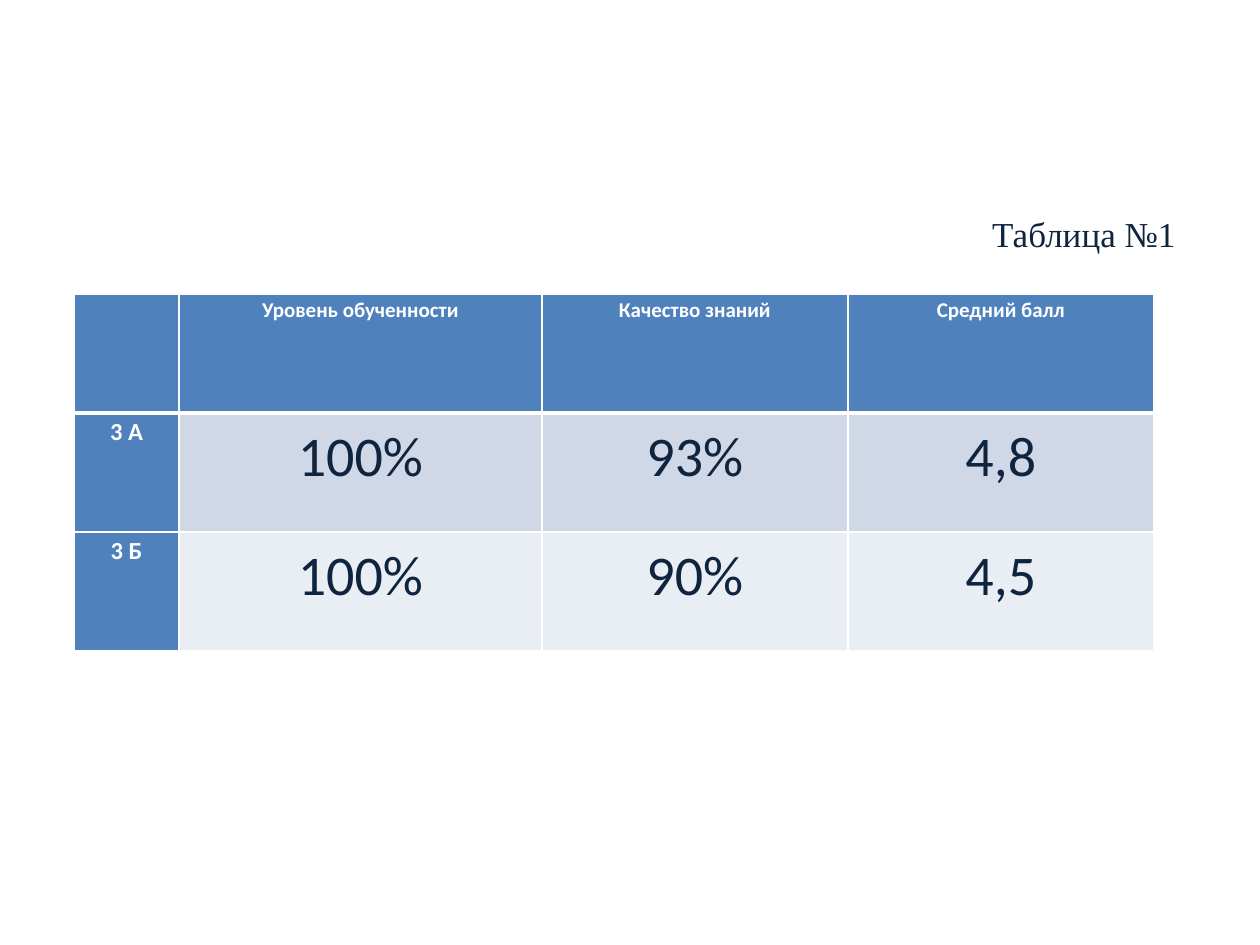
import dataclasses

import lxml.etree
import pptx
import pptx.dml.color
import pptx.enum.text
import pptx.oxml.ns
import pptx.util

ALIGN = pptx.enum.text.PP_ALIGN
ANCHOR = pptx.enum.text.MSO_ANCHOR


@dataclasses.dataclass(frozen=True)
class Theme:
    navy: str = "0F243E"
    blue: str = "4F81BD"
    white: str = "FFFFFF"
    bands: tuple = ("D0D8E8", "E9EDF4")
    title_font: str = "Times New Roman"
    table_font: str = "Calibri"
    title_size: int = 20
    header_size: int = 12
    label_size: int = 14
    value_size: int = 32
    line_spacing: float = 1.15
    thin: int = 1
    thick: int = 3


def px(n):
    return pptx.util.Emu(round(n * 914400 / 126))


def rgb(color):
    return pptx.dml.color.RGBColor.from_string(color)


class Deck:
    def __init__(self, theme):
        self.theme = theme
        self.prs = pptx.Presentation()
        self.prs.slide_width, self.prs.slide_height = px(1260), px(945)
        self.s = self.prs.slides.add_slide(self.prs.slide_layouts[6])

    def text(self, tf, text, font, size, color, align, bold=False):
        p = tf.paragraphs[0]
        p.text = text
        p.alignment = align
        p.line_spacing = self.theme.line_spacing
        for r in p.runs:
            r.font.name = font
            r.font.size = pptx.util.Pt(size)
            r.font.bold = bold
            r.font.color.rgb = rgb(color)
        return p

    def title(self, text, x, y, w, h):
        t = self.theme
        tf = self.s.shapes.add_textbox(px(x), px(y), px(w), px(h)).text_frame
        tf.word_wrap = True
        tf.vertical_anchor = ANCHOR.MIDDLE
        p = self.text(tf, text, t.title_font, t.title_size, t.navy, ALIGN.RIGHT)
        p.space_after = pptx.util.Pt(10)

    def border(self, cell, side, width):
        qn = pptx.oxml.ns.qn
        tcPr = cell._tc.get_or_add_tcPr()
        ln = lxml.etree.SubElement(tcPr, qn(f"a:ln{side}"), w=str(pptx.util.Pt(width)))
        fill = lxml.etree.SubElement(ln, qn("a:solidFill"))
        lxml.etree.SubElement(fill, qn("a:srgbClr"), val=self.theme.white)

    def cell(self, cell, text, row, col):
        t = self.theme
        cell.margin_left = cell.margin_right = px(9)
        cell.margin_top = cell.margin_bottom = 0
        widths = {"L": t.thin, "R": t.thin,
                  "T": t.thick if row == 1 else t.thin,
                  "B": t.thick if row == 0 else t.thin}
        for side, width in widths.items():
            self.border(cell, side, width)
        heading = row == 0 or col == 0
        if row == 0:
            size = t.header_size
        else:
            size = t.label_size if col == 0 else t.value_size
        cell.fill.solid()
        cell.fill.fore_color.rgb = rgb(t.blue if heading else t.bands[(row - 1) % 2])
        self.text(cell.text_frame, text, t.table_font, size,
                  t.white if heading else t.navy, ALIGN.CENTER, heading)

    def table(self, rows, x, y, widths, row_height):
        frame = self.s.shapes.add_table(len(rows), len(widths), px(x), px(y),
                                        px(sum(widths)), px(row_height * len(rows)))
        tbl = frame.table
        for column, width in zip(tbl.columns, widths):
            column.width = px(width)
        for i, texts in enumerate(rows):
            tbl.rows[i].height = px(row_height)
            for j, text in enumerate(texts):
                self.cell(tbl.cell(i, j), text, i, j)


def main():
    deck = Deck(Theme())
    deck.title("Таблица №1", 54, 175, 1134, 110)
    results = [
        ["", "Уровень обученности", "Качество знаний", "Средний балл"],
        ["3 А", "100%", "93%", "4,8"],
        ["3 Б", "100%", "90%", "4,5"],
    ]
    deck.table(results, 74, 294, [105, 363, 306, 306], 119)
    deck.prs.save("out.pptx")


if __name__ == "__main__":
    main()
